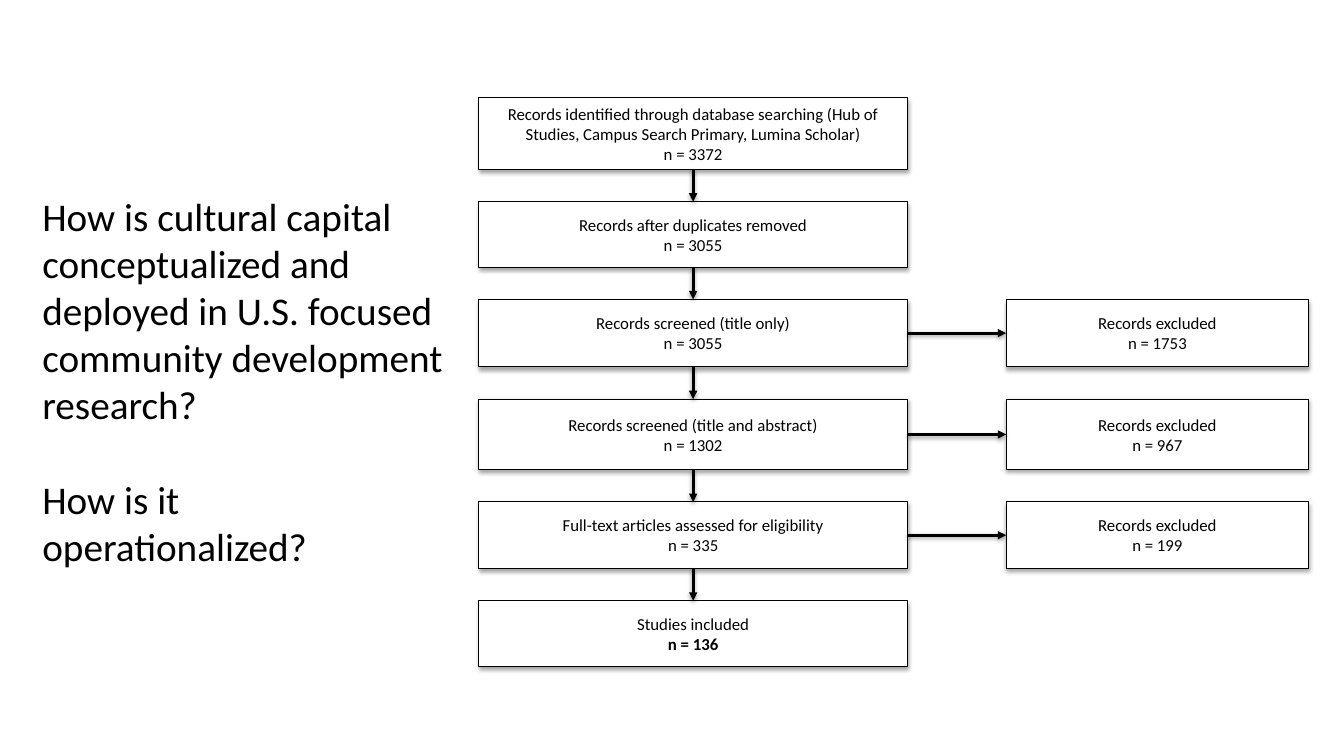
from dataclasses import dataclass
from typing import Optional

from lxml.etree import SubElement
from pptx import Presentation
from pptx.dml.color import RGBColor
from pptx.enum.shapes import MSO_CONNECTOR, MSO_SHAPE
from pptx.enum.text import MSO_ANCHOR, MSO_AUTO_SIZE, PP_ALIGN
from pptx.oxml.ns import qn
from pptx.shapes.autoshape import Shape
from pptx.util import Inches, Pt

FONT = "Calibri"
BLACK, WHITE = "000000", "FFFFFF"
FIRST_ROW_TOP, ROW_GAP = 0.97, 0.32
BOTTOM, TOP, RIGHT, LEFT = 2, 0, 3, 1


@dataclass(frozen=True)
class Column:
    left: float
    width: float


@dataclass(frozen=True)
class Stage:
    label: str
    count: int
    height: float
    excluded: Optional[int] = None
    bold_count: bool = False


QUESTIONS = Column(0.32, 4.25)
SCREENING = Column(4.75, 4.25)
EXCLUSION = Column(9.98, 3)

STAGES = [
    Stage("Records identified through database searching (Hub of "
          "Studies, Campus Search Primary, Lumina Scholar)", 3372, 0.71),
    Stage("Records after duplicates removed", 3055, 0.65),
    Stage("Records screened (title only)", 3055, 0.67, 1753),
    Stage("Records screened (title and abstract)", 1302, 0.7, 967),
    Stage("Full-text articles assessed for eligibility", 335, 0.66, 199),
    Stage("Studies included", 136, 0.65, bold_count=True),
]


def rgb(code: str) -> RGBColor:
    return RGBColor.from_string(code)


def add_shadow(shape, opacity: int, blur: float, distance: float) -> None:
    """Cast a black shadow straight down; call it once the line is set."""
    effects = SubElement(shape._element.spPr, qn("a:effectLst"))
    shadow = SubElement(effects, qn("a:outerShdw"), blurRad=str(Pt(blur)),
                        dist=str(Pt(distance)), dir="5400000", rotWithShape="0")
    colour = SubElement(shadow, qn("a:srgbClr"), val=BLACK)
    SubElement(colour, qn("a:alpha"), val=str(opacity * 1000))


def format_text(paragraph, size: float, alignment: PP_ALIGN) -> None:
    paragraph.alignment = alignment
    for run in paragraph.runs:
        run.font.name = FONT
        run.font.size = Pt(size)
        run.font.color.rgb = rgb(BLACK)


def add_box(slide, column: Column, top: float, height: float,
            label: str, count: int, bold_count: bool = False) -> Shape:
    box = slide.shapes.add_shape(MSO_SHAPE.RECTANGLE, Inches(column.left), Inches(top),
                                 Inches(column.width), Inches(height))
    box.fill.solid()
    box.fill.fore_color.rgb = rgb(WHITE)
    box.line.color.rgb = rgb(BLACK)
    box.line.width = Pt(0.75)
    add_shadow(box, 35, 3.1, 1.8)
    frame = box.text_frame
    frame.word_wrap = True
    frame.vertical_anchor = MSO_ANCHOR.MIDDLE
    frame.text = f"{label}\nn = {count}"
    for paragraph in frame.paragraphs:
        format_text(paragraph, 12, PP_ALIGN.CENTER)
    if bold_count:
        frame.paragraphs[1].runs[0].font.bold = True
    return box


def add_arrow(slide, start: Shape, start_side: int, end: Shape, end_side: int) -> None:
    arrow = slide.shapes.add_connector(MSO_CONNECTOR.STRAIGHT, 0, 0, 0, 0)
    arrow.begin_connect(start, start_side)
    arrow.end_connect(end, end_side)
    arrow.line.color.rgb = rgb(BLACK)
    arrow.line.width = Pt(2)
    SubElement(arrow._element.spPr.find(qn("a:ln")), qn("a:tailEnd"), type="triangle")
    add_shadow(arrow, 38, 3.1, 1.6)


def add_questions(slide) -> None:
    title = slide.shapes.title
    title.left, title.top = Inches(QUESTIONS.left), Inches(0.34)
    title.width, title.height = Inches(QUESTIONS.width), Inches(6.87)
    frame = title.text_frame
    frame.word_wrap = True
    frame.auto_size = MSO_AUTO_SIZE.NONE
    frame.vertical_anchor = MSO_ANCHOR.MIDDLE
    frame.text = ("How is cultural capital conceptualized and deployed in U.S. focused "
                  "community development research?\nHow is it operationalized?")
    for paragraph in frame.paragraphs:
        format_text(paragraph, 28, PP_ALIGN.LEFT)
    frame.paragraphs[1].space_before = Pt(34)


def add_flow(slide) -> None:
    top = FIRST_ROW_TOP
    previous = None
    for stage in STAGES:
        box = add_box(slide, SCREENING, top, stage.height,
                      stage.label, stage.count, stage.bold_count)
        if previous is not None:
            add_arrow(slide, previous, BOTTOM, box, TOP)
        if stage.excluded is not None:
            excluded = add_box(slide, EXCLUSION, top, stage.height,
                               "Records excluded", stage.excluded)
            add_arrow(slide, box, RIGHT, excluded, LEFT)
        previous = box
        top += stage.height + ROW_GAP


def main() -> None:
    deck = Presentation()
    deck.slide_width, deck.slide_height = Inches(13.33), Inches(7.5)
    slide = deck.slides.add_slide(deck.slide_layouts.get_by_name("Title Only"))
    add_questions(slide)
    add_flow(slide)
    deck.save("out.pptx")


if __name__ == "__main__":
    main()
